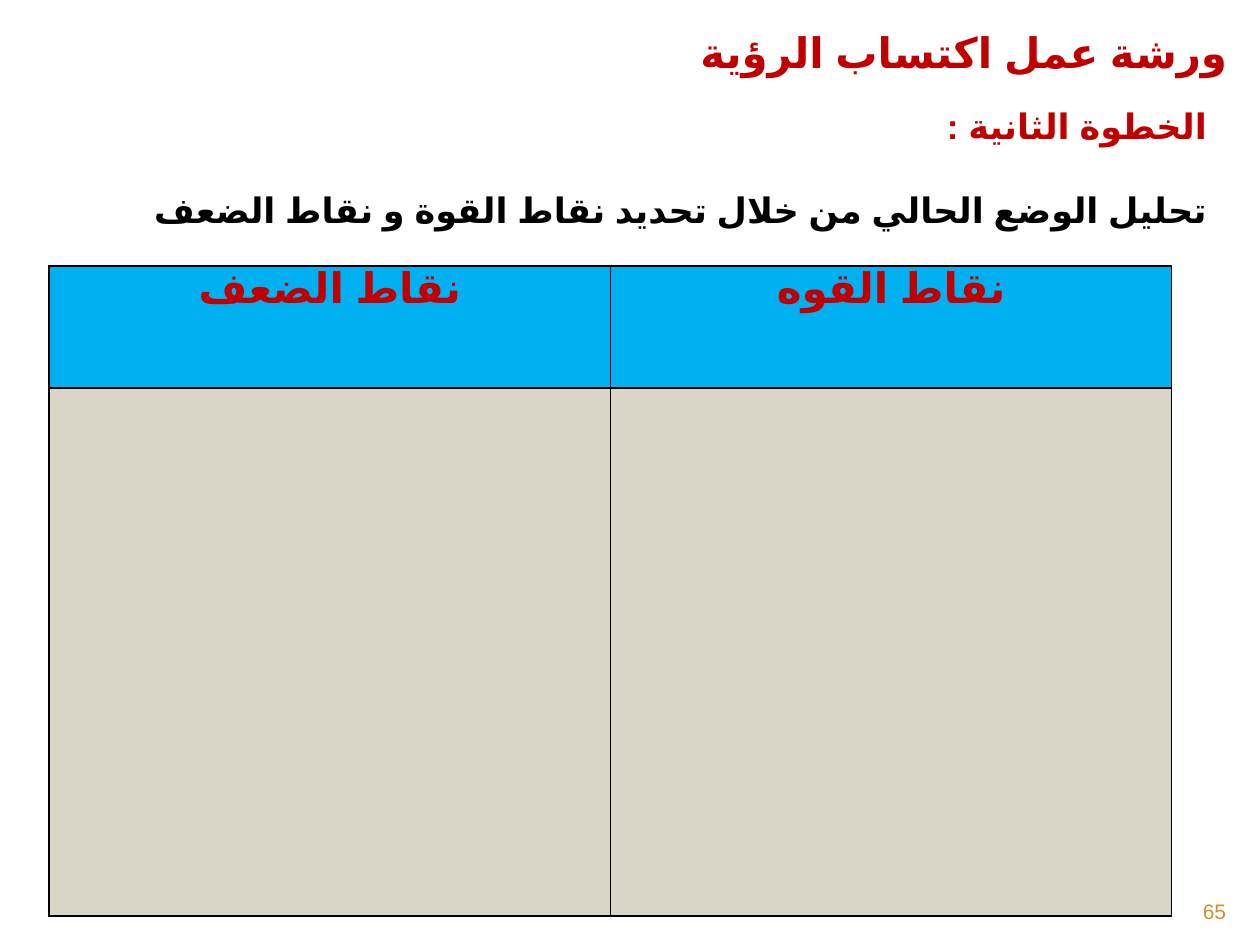
from pptx import Presentation
from pptx import util as u
from pptx.dml.color import RGBColor
from pptx.enum import text
from pptx.oxml import parse_xml
from pptx.oxml.ns import nsdecls
from lxml import etree

RED = RGBColor(0xC0, 0x00, 0x00)
BLACK = RGBColor(0x00, 0x00, 0x00)
BLUE = RGBColor(0x00, 0xB0, 0xF0)
BEIGE = RGBColor(0xD9, 0xD5, 0xC7)
ORANGE = RGBColor(0xD4, 0x8F, 0x29)
RIGHT, CENTER = text.PP_ALIGN.RIGHT, text.PP_ALIGN.CENTER


class SlideBuilder:
    font = "Arial"
    language = "ar-SA"

    def __init__(self, presentation):
        # Layout 1 holds a title and a body.
        self.slide = presentation.slides.add_slide(presentation.slide_layouts[1])

    def format(self, paragraph, size, color, align=RIGHT, bold=True, font=None):
        """Set right-to-left direction, alignment and run style."""
        paragraph.alignment = align
        paragraph.space_before = u.Pt(0)
        paragraph._p.get_or_add_pPr().set("rtl", "1")
        for run in paragraph.runs:
            run.font.size = u.Pt(size)
            run.font.bold = bold
            run.font.color.rgb = color
            run.font.name = font or self.font
            properties = run._r.get_or_add_rPr()
            properties.set("lang", self.language)
            properties.append(parse_xml(
                f'<a:cs {nsdecls("a")} typeface="{self.font}"/>'))

    def place(self, shape, left, top, width, height):
        shape.left, shape.top = u.Inches(left), u.Inches(top)
        shape.width, shape.height = u.Inches(width), u.Inches(height)
        frame = shape.text_frame
        frame.word_wrap = True
        frame.auto_size = text.MSO_AUTO_SIZE.NONE
        frame.vertical_anchor = text.MSO_ANCHOR.TOP
        return frame

    def title(self, words, *box):
        frame = self.place(self.slide.shapes.title, *box)
        frame.text = words
        self.format(frame.paragraphs[0], 24, RED)

    def body(self, lines, gap, *box):
        """Write (words, colour) lines without bullets, gap points apart."""
        frame = self.place(self.slide.placeholders[1], *box)
        frame.text = "\n".join(words for words, _ in lines)
        for index, (paragraph, (_, color)) in enumerate(zip(frame.paragraphs, lines)):
            self.format(paragraph, 20, color)
            paragraph.space_before = u.Pt(gap if index else 0)
            properties = paragraph._p.get_or_add_pPr()
            properties.set("marL", "0")
            properties.set("marR", "0")
            properties.set("indent", "0")
            etree.SubElement(properties, "{%s}buNone" % properties.nsmap["a"])

    def page_number(self, words, *box):
        shape = self.slide.shapes.add_textbox(0, 0, 0, 0)
        frame = self.place(shape, *box)
        frame.text = words
        self.format(frame.paragraphs[0], 12, ORANGE, bold=False, font="Karla")

    def border(self, cell):
        for side in ("lnL", "lnR", "lnT", "lnB"):
            cell._tc.get_or_add_tcPr().append(parse_xml(
                f'<a:{side} {nsdecls("a")} w="{u.Pt(1)}"><a:solidFill>'
                f'<a:srgbClr val="{BLACK}"/></a:solidFill></a:{side}>'))

    def table(self, headings, row_heights, left, top, width):
        """Draw a heading row above empty rows, in equal columns."""
        table = self.slide.shapes.add_table(
            len(row_heights), len(headings), u.Inches(left), u.Inches(top),
            u.Inches(width), u.Inches(sum(row_heights))).table
        for row, height in zip(table.rows, row_heights):
            row.height = u.Inches(height)
        for cell in table.iter_cells():
            self.border(cell)
            cell.margin_top = 0
            cell.fill.solid()
            cell.fill.fore_color.rgb = BEIGE
        for column, words in enumerate(headings):
            cell = table.cell(0, column)
            cell.fill.fore_color.rgb = BLUE
            cell.text_frame.text = words
            self.format(cell.text_frame.paragraphs[0], 24, RED, CENTER)


def main():
    presentation = Presentation()
    presentation.slide_width = u.Inches(10)
    presentation.slide_height = u.Inches(7.5)

    builder = SlideBuilder(presentation)
    builder.page_number("65", 9, 7.08, 0.83, 0.27)
    builder.title("ورشة عمل اكتساب الرؤية", 5.31, 0.16, 4.53, 0.5)
    builder.table(["نقاط الضعف", "نقاط القوه"], [0.97, 4.19], 0.39, 2.11, 8.91)
    builder.body([
        ("الخطوة الثانية :", RED),
        ("تحليل الوضع الحالي من خلال تحديد نقاط القوة و نقاط الضعف", BLACK),
    ], 24, 0.62, 0.78, 9.06, 1.11)

    presentation.save("out.pptx")


if __name__ == "__main__":
    main()
